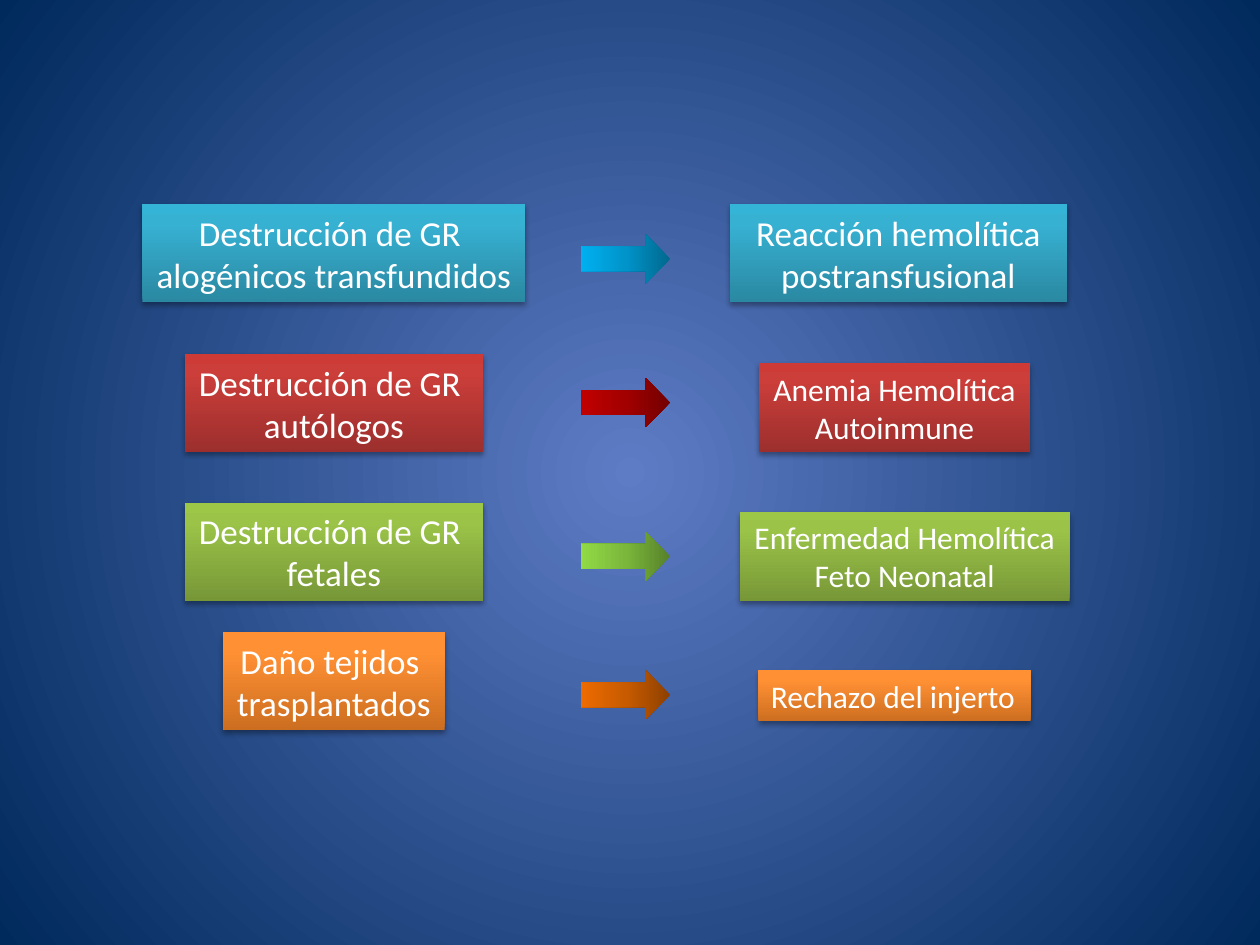
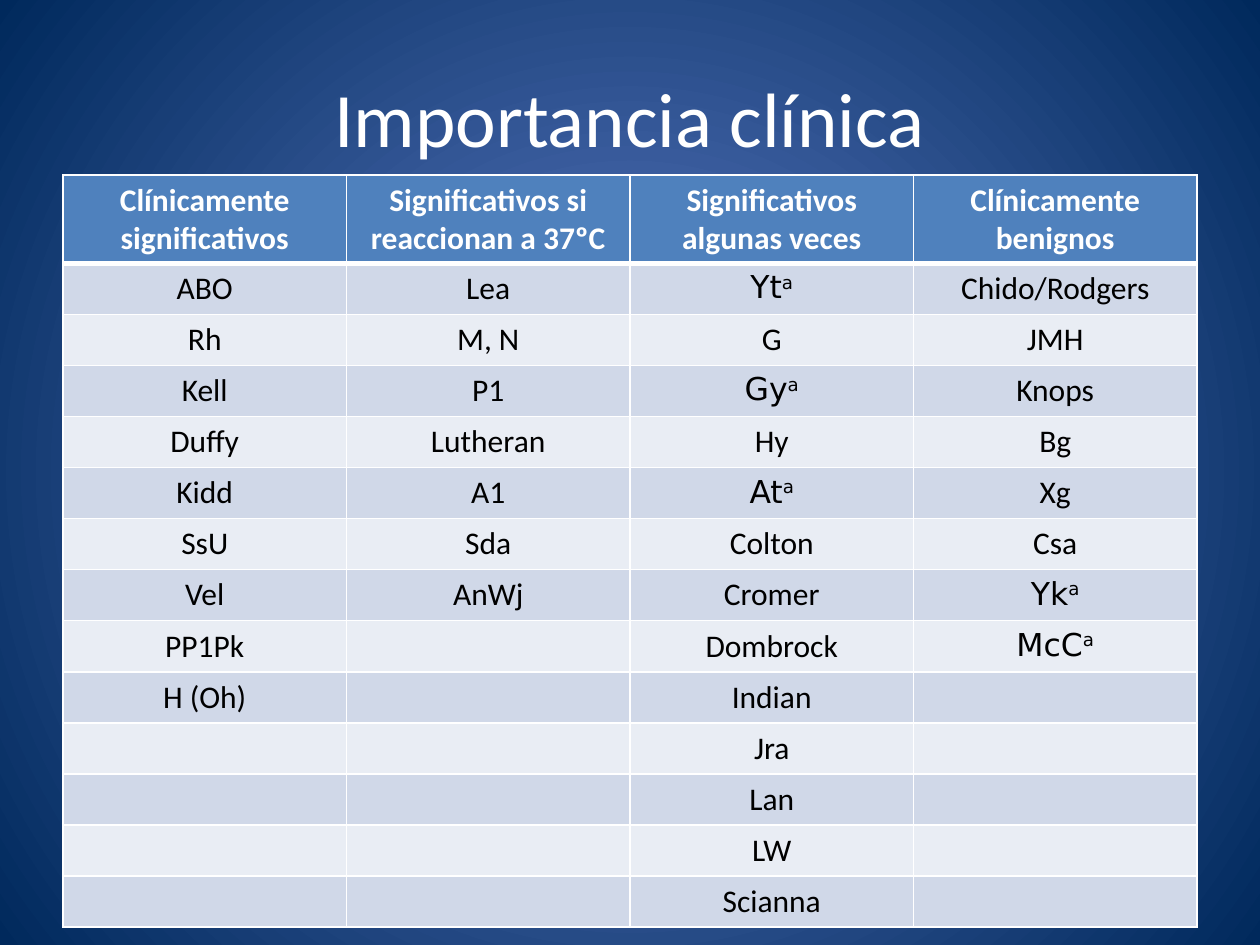
from lxml import etree
from pptx import Presentation
from pptx.dml.color import RGBColor
from pptx.enum.shapes import MSO_SHAPE
from pptx.enum.text import MSO_ANCHOR, MSO_AUTO_SIZE, PP_ALIGN
from pptx.oxml.ns import qn
from pptx.util import Inches, Pt

RECTANGLE, RIGHT_ARROW = MSO_SHAPE.RECTANGLE, MSO_SHAPE.RIGHT_ARROW
CENTER, LEFT = PP_ALIGN.CENTER, PP_ALIGN.LEFT
MIDDLE = MSO_ANCHOR.MIDDLE
GROW = MSO_AUTO_SIZE.SHAPE_TO_FIT_TEXT

# Grid of 10 columns by 7.5 rows over the slide
SLIDE_W, SLIDE_H = Inches(10), Inches(7.5)
COL, ROW = SLIDE_W / 10, SLIDE_H / 7.5

BODY_FONT, SYMBOL_FONT = "Calibri", "DejaVu Sans"
WHITE = RGBColor(0xFF, 0xFF, 0xFF)
BLACK = RGBColor(0, 0, 0)
HEADER_BLUE = RGBColor(0x4F, 0x81, 0xBD)
BANDS = (RGBColor(0xD0, 0xD8, 0xE8), RGBColor(0xE9, 0xED, 0xF4))
BACKDROP = (RGBColor(0x5E, 0x7C, 0xC5), RGBColor(0x00, 0x29, 0x5C))

# Gradient colours, dark to light
BOX_STOPS, ARROW_STOPS = (0, 80, 100), (0, 50, 100)
AQUA_BOX = (RGBColor(0x2A, 0x88, 0xA2), RGBColor(0x37, 0xB1, 0xD2), RGBColor(0x34, 0xB4, 0xD6))
AQUA_ARROW = (RGBColor(0x00, 0x68, 0x8E), RGBColor(0x00, 0x94, 0xCA), RGBColor(0x00, 0xB0, 0xF0))
RED_BOX = (RGBColor(0x9C, 0x2F, 0x2D), RGBColor(0xCB, 0x3E, 0x3A), RGBColor(0xCE, 0x3B, 0x37))
RED_ARROW = (RGBColor(0x72, 0x00, 0x00), RGBColor(0xA2, 0x00, 0x00), RGBColor(0xC0, 0x00, 0x00))
GREEN_BOX = (RGBColor(0x77, 0x97, 0x37), RGBColor(0x9B, 0xC3, 0x48), RGBColor(0x9D, 0xC7, 0x46))
GREEN_ARROW = (RGBColor(0x57, 0x81, 0x2A), RGBColor(0x7B, 0xB7, 0x3B), RGBColor(0x92, 0xDA, 0x46))
ORANGE_BOX = (RGBColor(0xCC, 0x6E, 0x20), RGBColor(0xFF, 0x90, 0x34), RGBColor(0xFF, 0x91, 0x36))
ORANGE_ARROW = (RGBColor(0x8D, 0x40, 0x00), RGBColor(0xC8, 0x5B, 0x00), RGBColor(0xEE, 0x6B, 0x00))

CAUSE_CENTER = 2.65
# Box colours, arrow colours, arrow top,
# cause (text, top, width), effect (text, centre, top, width, size)
REACTIONS = [
    (AQUA_BOX, AQUA_ARROW, 1.86,
     ("Destrucción de GR \nalogénicos transfundidos", 1.62, 3.04),
     ("Reacción hemolítica postransfusional", 7.13, 1.62, 2.68, 20)),
    (RED_BOX, RED_ARROW, 3,
     ("Destrucción de GR \nautólogos", 2.81, 2.37),
     ("Anemia Hemolítica\nAutoinmune", 7.1, 2.88, 2.15, 18)),
    (GREEN_BOX, GREEN_ARROW, 4.22,
     ("Destrucción de GR \nfetales", 3.99, 2.37),
     ("Enfermedad Hemolítica\nFeto Neonatal", 7.18, 4.06, 2.62, 18)),
    (ORANGE_BOX, ORANGE_ARROW, 5.32,
     ("Daño tejidos \ntrasplantados", 5.02, 1.76),
     ("Rechazo del injerto", 7.1, 5.32, 2.16, 18)),
]

# Antigens by column; "^" marks a superscript
ANTIGENS = {
    "Clínicamente significativos":
        ["ABO", "Rh", "Kell", "Duffy", "Kidd", "SsU", "Vel", "PP1Pk", "H (Oh)"],
    "Significativos si reaccionan a 37ºC":
        ["Lea", "M, N", "P1", "Lutheran", "A1", "Sda", "AnWj"],
    "Significativos algunas veces":
        ["Yt^a", "G", "Gy^a", "Hy", "At^a", "Colton", "Cromer", "Dombrock",
         "Indian", "Jra", "Lan", "LW", "Scianna"],
    "Clínicamente benignos":
        ["Chido/Rodgers", "JMH", "Knops", "Bg", "Xg", "Csa", "Yk^a", "McC^a"],
}


def place(left, top, width, height):
    """Turn grid columns and rows into slide lengths."""
    return int(left * COL), int(top * ROW), int(width * COL), int(height * ROW)


def add_xml(parent, tag, **attributes):
    return etree.SubElement(parent, qn(tag), attributes)


def paint_gradient(fill, element, colors, stops, angle=None):
    """Linear gradient at an angle, or circular when no angle is given."""
    fill.background()
    plain = next(element.iter(qn("a:noFill")))
    gradient = etree.Element(qn("a:gradFill"), rotWithShape="1")
    stop_list = add_xml(gradient, "a:gsLst")
    for color, stop in zip(colors, stops):
        mark = add_xml(stop_list, "a:gs", pos=str(stop * 1000))
        add_xml(mark, "a:srgbClr", val=str(color))
    if angle is None:
        circle = add_xml(gradient, "a:path", path="circle")
        add_xml(circle, "a:fillToRect", l="50000", t="50000", r="50000", b="50000")
    else:
        add_xml(gradient, "a:lin", ang=str(angle * 60000), scaled="0")
    plain.getparent().replace(plain, gradient)


def cast_shadow(shape):
    effects = shape.element.spPr.find(qn("a:effectLst"))
    shadow = add_xml(effects, "a:outerShdw", blurRad=str(Pt(3.1)), dist=str(Pt(1.8)),
                     dir="5400000", rotWithShape="0")
    add_xml(add_xml(shadow, "a:srgbClr", val="000000"), "a:alpha", val="35000")


def style_text(frame, size, color, align=CENTER, bold=False, font=BODY_FONT):
    for paragraph in frame.paragraphs:
        paragraph.alignment = align
        for run in paragraph.runs:
            run.font.size, run.font.name, run.font.bold = Pt(size), font, bold
            run.font.color.rgb = color


def add_backdrop_slide(prs):
    slide = prs.slides.add_slide(prs.slide_layouts[6])
    paint_gradient(slide.background.fill, slide.element, BACKDROP, (0, 100))
    return slide


def add_gradient_shape(slide, kind, position, colors, stops, angle):
    shape = slide.shapes.add_shape(kind, *place(*position))
    paint_gradient(shape.fill, shape.element, colors, stops, angle)
    shape.line.fill.background()
    shape.shadow.inherit = False
    return shape


def add_box(slide, text, center, top, width, size, colors):
    wraps = "postransfusional" in text
    lines = text.count("\n") + 1 + wraps
    height = lines * size * 1.22 / 72 + 0.1
    box = add_gradient_shape(slide, RECTANGLE, (center - width / 2, top, width, height),
                             colors, BOX_STOPS, 270)
    cast_shadow(box)
    frame = box.text_frame
    frame.text = text
    frame.word_wrap = wraps
    frame.auto_size = GROW
    style_text(frame, size, WHITE, CENTER if lines > 1 else LEFT)


def add_title(slide, text):
    title = slide.shapes.add_textbox(*place(0.5, 0.3, 9, 1.25))
    frame = title.text_frame
    frame.text = text
    frame.word_wrap = True
    frame.vertical_anchor = MIDDLE
    style_text(frame, 44, WHITE)


def border_cell(cell, top, bottom):
    widths = {"a:lnL": 1, "a:lnR": 1, "a:lnT": top, "a:lnB": bottom}
    properties = cell._tc.get_or_add_tcPr()
    for index, (side, width) in enumerate(widths.items()):
        line = etree.Element(qn(side), w=str(Pt(width)))
        add_xml(add_xml(line, "a:solidFill"), "a:srgbClr", val=str(WHITE))
        properties.insert(index, line)


def fill_cell(cell, text, row):
    header = row == 0
    base, _, superscript = text.partition("^")
    cell.text = base
    if superscript:
        raised = cell.text_frame.paragraphs[0].add_run()
        raised.text = superscript
        raised._r.get_or_add_rPr().set("baseline", "30000")
    style_text(cell.text_frame, 18, WHITE if header else BLACK, bold=header,
               font=SYMBOL_FONT if superscript else BODY_FONT)
    cell.fill.solid()
    cell.fill.fore_color.rgb = HEADER_BLUE if header else BANDS[(row - 1) % 2]
    border_cell(cell, top=3 if row == 1 else 1, bottom=3 if header else 1)


def add_antigen_table(slide):
    columns = [[heading, *names] for heading, names in ANTIGENS.items()]
    row_count = max(map(len, columns))
    header_height, table_height = 0.7, 5.97
    table = slide.shapes.add_table(row_count, len(columns),
                                   *place(0.5, 1.39, 9, table_height)).table
    body_height = (table_height - header_height) / (row_count - 1)
    for row in range(row_count):
        table.rows[row].height = int(ROW * (body_height if row else header_height))
        for col, names in enumerate(columns):
            fill_cell(table.cell(row, col), names[row] if row < len(names) else "", row)


def main():
    prs = Presentation()
    prs.slide_width, prs.slide_height = SLIDE_W, SLIDE_H

    # Causes and the reactions they lead to
    reactions = add_backdrop_slide(prs)
    for box_colors, arrow_colors, arrow_top, cause, effect in REACTIONS:
        cause_text, cause_top, cause_width = cause
        add_box(reactions, cause_text, CAUSE_CENTER, cause_top, cause_width, 20, box_colors)
        add_gradient_shape(reactions, RIGHT_ARROW, (4.61, arrow_top, 0.71, 0.39),
                           arrow_colors, ARROW_STOPS, 180)
        add_box(reactions, *effect, box_colors)

    # Clinical importance of the antigens
    importance = add_backdrop_slide(prs)
    add_title(importance, "Importancia clínica")
    add_antigen_table(importance)

    prs.save("out.pptx")


if __name__ == "__main__":
    main()
